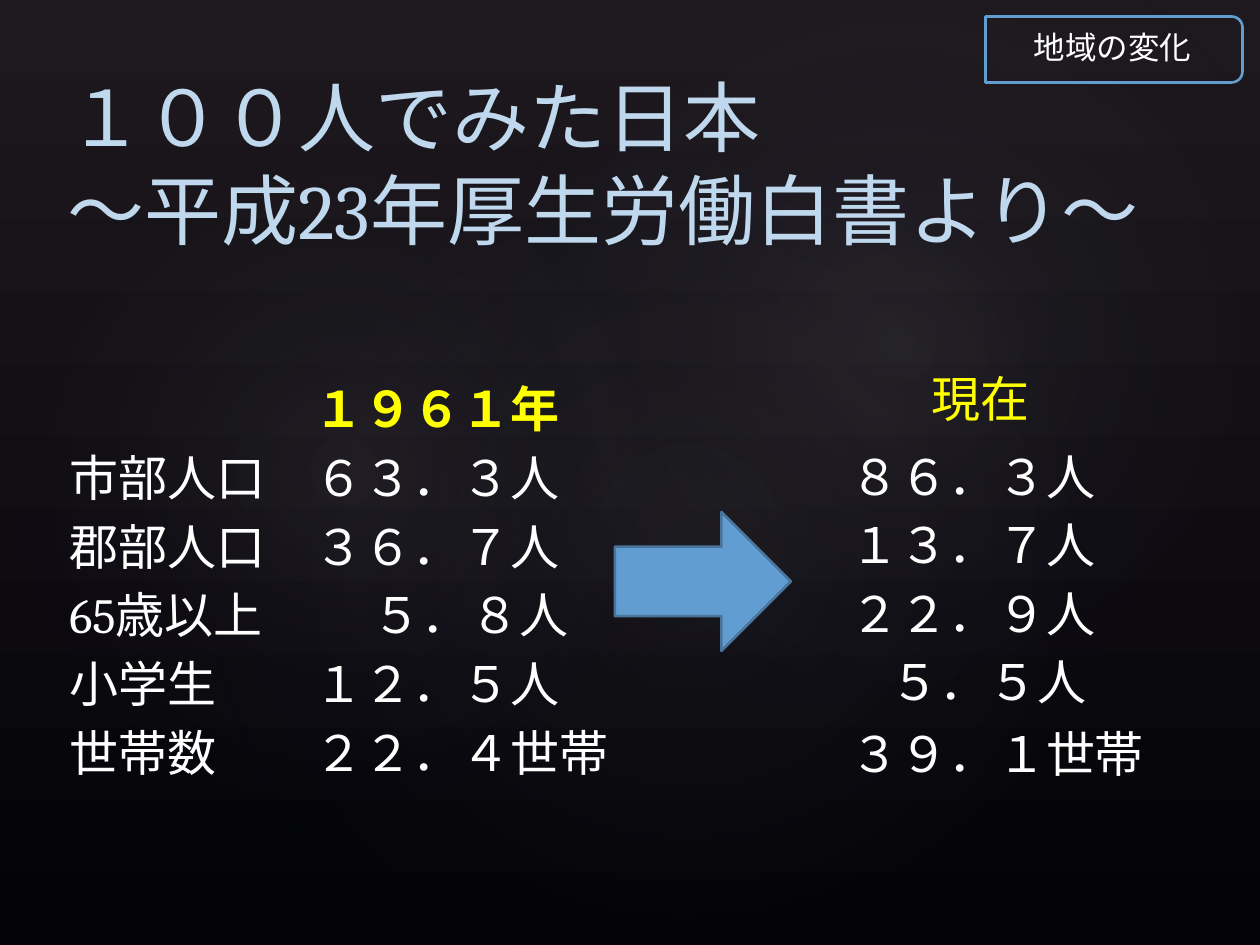
"""Build the slide comparing Japan as 100 people in 1961 and today."""
from lxml.etree import SubElement as Sub
from pptx import Presentation
from pptx.dml.color import RGBColor
from pptx.enum.lang import MSO_LANGUAGE_ID as Lang
from pptx.enum.shapes import MSO_SHAPE as Form
from pptx.enum.text import MSO_ANCHOR as Anchor
from pptx.oxml import parse_xml
from pptx.oxml.ns import nsdecls, qn
from pptx.util import Pt

PX = 914400 // 126
DUSK = RGBColor(0x1D, 0x19, 0x1E)
NIGHT = RGBColor(0x03, 0x03, 0x07)
PALE = RGBColor(0xC0, 0xD8, 0xED)
YELLOW = RGBColor(0xFF, 0xFF, 0x00)
WHITE = RGBColor(0xFF, 0xFF, 0xFF)
BLUE = RGBColor(0x62, 0x9D, 0xD1)
STEEL = RGBColor(0x49, 0x74, 0x9B)


def add_text(shapes, box, lines, size, color, anchor=Anchor.TOP, gap=0):
    frame = shapes.add_textbox(*[n * PX for n in box]).text_frame
    frame.word_wrap = True
    frame.vertical_anchor = anchor
    for i, line in enumerate(lines):
        para = frame.paragraphs[0] if i == 0 else frame.add_paragraph()
        para.space_before = Pt(gap)
        run = para.add_run()
        run.text = line
        look = {"name": "Cambria", "size": Pt(size), "bold": False,
                "language_id": Lang.JAPANESE}
        for key, value in look.items():
            setattr(run.font, key, value)
        run.font.color.rgb = color
    return frame


def add_form(shapes, kind, box, turn=0):
    form = shapes.add_shape(kind, *[n * PX for n in box])
    form.shadow.inherit = False
    form.rotation = turn
    form.fill.background()
    form.line.fill.background()
    return form


deck = Presentation()
deck.slide_width, deck.slide_height = 1260 * PX, 945 * PX
slide = deck.slides.add_slide(deck.slide_layouts[6])
shapes = slide.shapes

back = slide.background.fill
back.gradient()
back.gradient_angle = 270
for stop, color, place in zip(back.gradient_stops, (DUSK, NIGHT), (0, 1)):
    stop.color.rgb = color
    stop.position = place

for box, turn, alpha in [((189, 144, 998, 786), 328.7, 7),
                         ((-38, 161, 764, 617), 294.3, 8),
                         ((451, 16, 893, 655), 328.7, 8)]:
    glow = add_form(shapes, Form.OVAL, box, turn)
    fill = parse_xml(
        f'<a:gradFill {nsdecls("a")} rotWithShape="1"><a:gsLst>'
        f'<a:gs pos="0"><a:srgbClr val="C4BCC6"><a:alpha val="{alpha * 1000}"/></a:srgbClr></a:gs>'
        '<a:gs pos="58000"><a:srgbClr val="242852"><a:alpha val="0"/></a:srgbClr></a:gs></a:gsLst>'
        '<a:path path="circle"><a:fillToRect l="50000" t="50000" r="50000" b="50000"/></a:path>'
        '</a:gradFill>')
    props = glow.element.spPr
    props.replace(props.find(qn("a:noFill")), fill)

add_text(shapes, (55, 135, 1150, 126),
         ["１００人でみた日本", "～平成23年厚生労働白書より～"], 44, PALE, Anchor.BOTTOM)
add_text(shapes, (919, 344, 147, 108), ["現在"], 28, YELLOW, Anchor.MIDDLE, 5.6)

rows = ["\t１９６１年", "市部人口\t６３．３人", "郡部人口\t３６．７人",
        "65歳以上\t５．８人", "小学生\t１２．５人", "世帯数\t２２．４世帯"]
past = add_text(shapes, (57, 312, 573, 536), rows, 28, WHITE, Anchor.MIDDLE, 5.6)
for row, para in zip(rows, past.paragraphs):
    indent = 303 if "歳" in row else 245
    tabs = Sub(para._p.get_or_add_pPr(), qn("a:tabLst"))
    Sub(tabs, qn("a:tab"), pos=str(indent * PX), algn="l")
head = past.paragraphs[0].runs[0].font
head.bold = True
head.color.rgb = YELLOW

arrow = add_form(shapes, Form.RIGHT_ARROW, (615, 512, 176, 139))
arrow.fill.solid()
arrow.fill.fore_color.rgb = BLUE
arrow.line.color.rgb = STEEL
arrow.line.width = Pt(1.5)

for left, top, wide, text in [(838, 440, 307, "８６．３人"), (838, 508, 307, "１３．７人"),
                              (838, 577, 307, "２２．９人"), (878, 645, 307, "５．５人"),
                              (838, 717, 368, "３９．１世帯")]:
    add_text(shapes, (left, top, wide, 72), [text], 28, WHITE)

group = shapes.add_group_shape().shapes
tag = add_form(group, Form.ROUND_2_SAME_RECTANGLE, (1081, -79, 66, 257), 90)
tag.line.color.rgb = BLUE
tag.line.width = Pt(1.5)
label = add_text(group, (985, 20, 256, 59), ["地域の変化"], 18, WHITE, Anchor.MIDDLE)
label.paragraphs[0].line_spacing = 0.9
label.paragraphs[0].space_after = Pt(2.7)
for side, inset in {"left": 49, "top": 4, "right": 4, "bottom": 4}.items():
    setattr(label, "margin_" + side, inset * PX)

deck.save("out.pptx")
